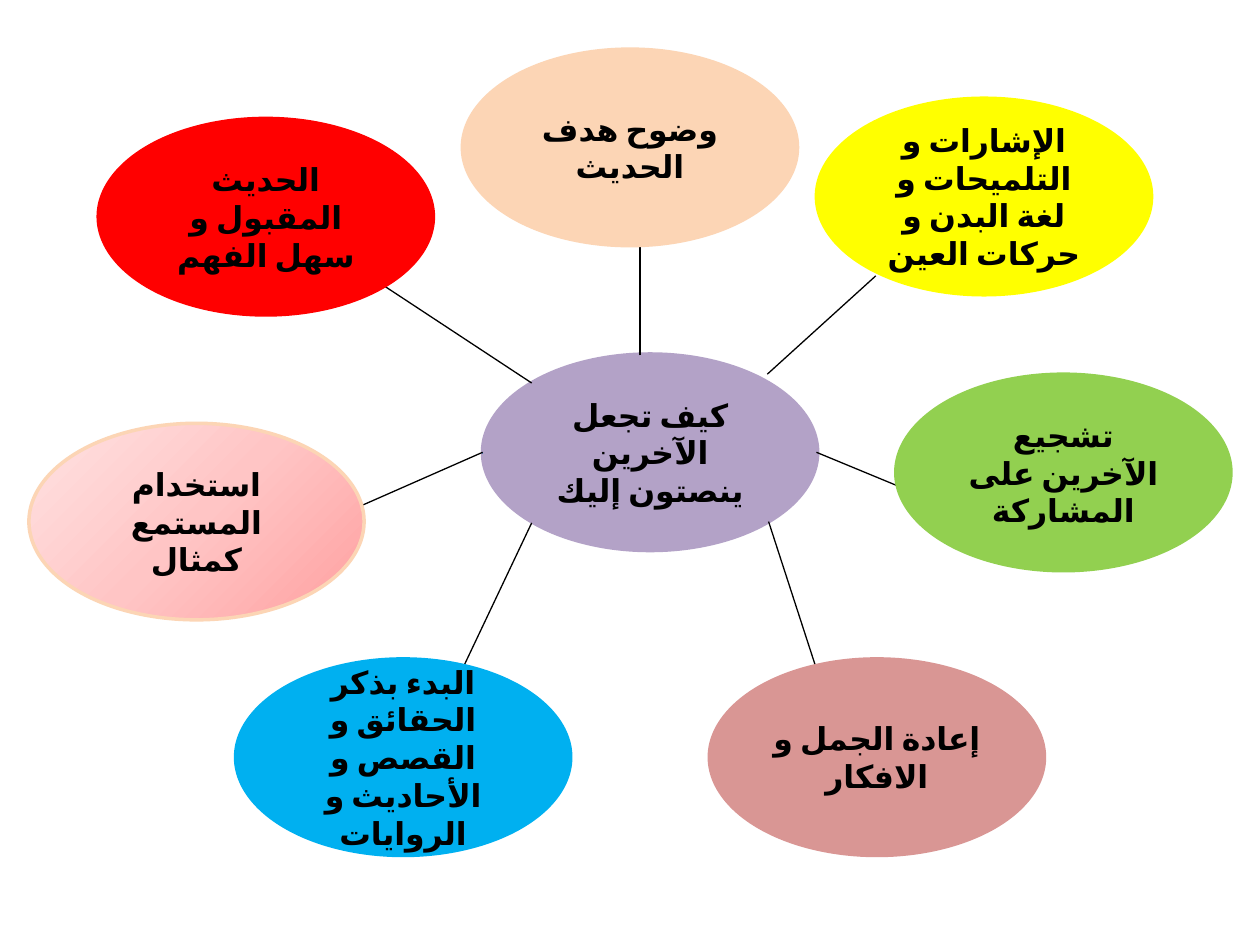
import copy

import pptx
import pptx.dml.color
import pptx.enum.shapes
import pptx.enum.text
import pptx.oxml.ns
import pptx.util
from lxml import etree

COLUMNS, ROWS = 100, 75
BUBBLE_WIDTH, BUBBLE_HEIGHT = 26.6, 15.6
PINK_STOPS = [(0, "FFA0A0"), (0.5, "FFC5C5"), (1, "FFE3E3")]

CENTRE = (38.3, 28.1, "كيف تجعل الآخرين ينصتون إليك", "B3A2C7", "B3A2C7")
BUBBLES = [
    (7.8, 9.4, "الحديث المقبول و سهل الفهم", "FF0000", "FF0000"),
    (64.8, 7.8, "الإشارات و التلميحات و لغة البدن و حركات العين", "FFFF00", "FFFF00"),
    (2.3, 33.6, "استخدام المستمع كمثال", PINK_STOPS, "FCD5B5"),
    (18.7, 52.3, "البدء بذكر الحقائق و القصص و الأحاديث و الروايات", "00B0F0", "00B0F0"),
    (56.3, 52.3, "إعادة الجمل و الافكار", "D99694", "D99694"),
    (71.1, 29.7, "تشجيع الآخرين على المشاركة", "92D050", "92D050"),
    (36.7, 3.9, "وضوح هدف الحديث", "FCD5B5", "FCD5B5"),
]
SPOKES = [
    (42.2, 30.4, 30.5, 22.7, "000000"),
    (50.8, 28.2, 50.8, 19.5, "000000"),
    (60.9, 29.7, 69.5, 21.9, "000000"),
    (38.3, 36, 38.3, 35.9, "4B7EBC"),
    (38.3, 35.9, 25.8, 41.4, "000000"),
    (61, 41.4, 64.8, 53.1, "000000"),
    (64.8, 35.9, 78.1, 41.4, "000000"),
    (42.2, 41.5, 36.7, 53.1, "000000"),
]


def color(value):
    return pptx.dml.color.RGBColor.from_string(value)


def place(box, column, row):
    left, top, width, height = box
    return int(left + width * column / COLUMNS), int(top + height * row / ROWS)


def write_text(shape, text, size=18, font="Calibri", fill="000000", bold=True):
    frame = shape.text_frame
    frame.word_wrap = True
    frame.vertical_anchor = pptx.enum.text.MSO_ANCHOR.MIDDLE
    paragraph = frame.paragraphs[0]
    paragraph.alignment = pptx.enum.text.PP_ALIGN.CENTER
    paragraph._p.get_or_add_pPr().set("rtl", "1")
    run = paragraph.add_run()
    run.text = text
    run.font.size = pptx.util.Pt(size)
    run.font.name = font
    run.font.bold = bold
    run.font.color.rgb = color(fill)
    properties = run._r.get_or_add_rPr()
    properties.set("lang", "ar-SA")
    etree.SubElement(properties, pptx.oxml.ns.qn("a:cs"), typeface=font)


def fill_gradient(shape, stops, angle):
    shape.fill.gradient()
    shape.fill.gradient_angle = angle
    stop_list = shape._element.spPr.find(".//" + pptx.oxml.ns.qn("a:gsLst"))
    stop_list.insert(1, copy.deepcopy(stop_list[0]))
    for stop, (position, value) in zip(shape.fill.gradient_stops, stops):
        stop.position = position
        stop.color.rgb = color(value)


def add_bubble(slide, box, column, row, text, fill, outline):
    shape = slide.shapes.add_shape(
        pptx.enum.shapes.MSO_SHAPE.OVAL,
        *place(box, column, row),
        int(box[2] * BUBBLE_WIDTH / COLUMNS),
        int(box[3] * BUBBLE_HEIGHT / ROWS),
    )
    shape.shadow.inherit = False
    if isinstance(fill, str):
        shape.fill.solid()
        shape.fill.fore_color.rgb = color(fill)
    else:
        fill_gradient(shape, fill, 135)
    shape.line.color.rgb = color(outline)
    shape.line.width = pptx.util.Pt(2)
    write_text(shape, text)


def add_spoke(slide, box, begin_column, begin_row, end_column, end_row, stroke):
    connector = slide.shapes.add_connector(
        pptx.enum.shapes.MSO_CONNECTOR.STRAIGHT,
        *place(box, begin_column, begin_row),
        *place(box, end_column, end_row),
    )
    connector.line.color.rgb = color(stroke)
    connector.line.width = pptx.util.Pt(0.75)
    etree.SubElement(connector._element.spPr, pptx.oxml.ns.qn("a:effectLst"))


def add_mind_map(slide, box):
    add_bubble(slide, box, *CENTRE)
    for spoke in SPOKES:
        add_spoke(slide, box, *spoke)
    for bubble in BUBBLES:
        add_bubble(slide, box, *bubble)


def main():
    presentation = pptx.Presentation()
    presentation.slide_width = pptx.util.Inches(10)
    presentation.slide_height = pptx.util.Inches(7.5)
    slide = presentation.slides.add_slide(presentation.slide_layouts[6])
    add_mind_map(slide, (0, 0, presentation.slide_width, presentation.slide_height))
    presentation.save("out.pptx")


if __name__ == "__main__":
    main()
